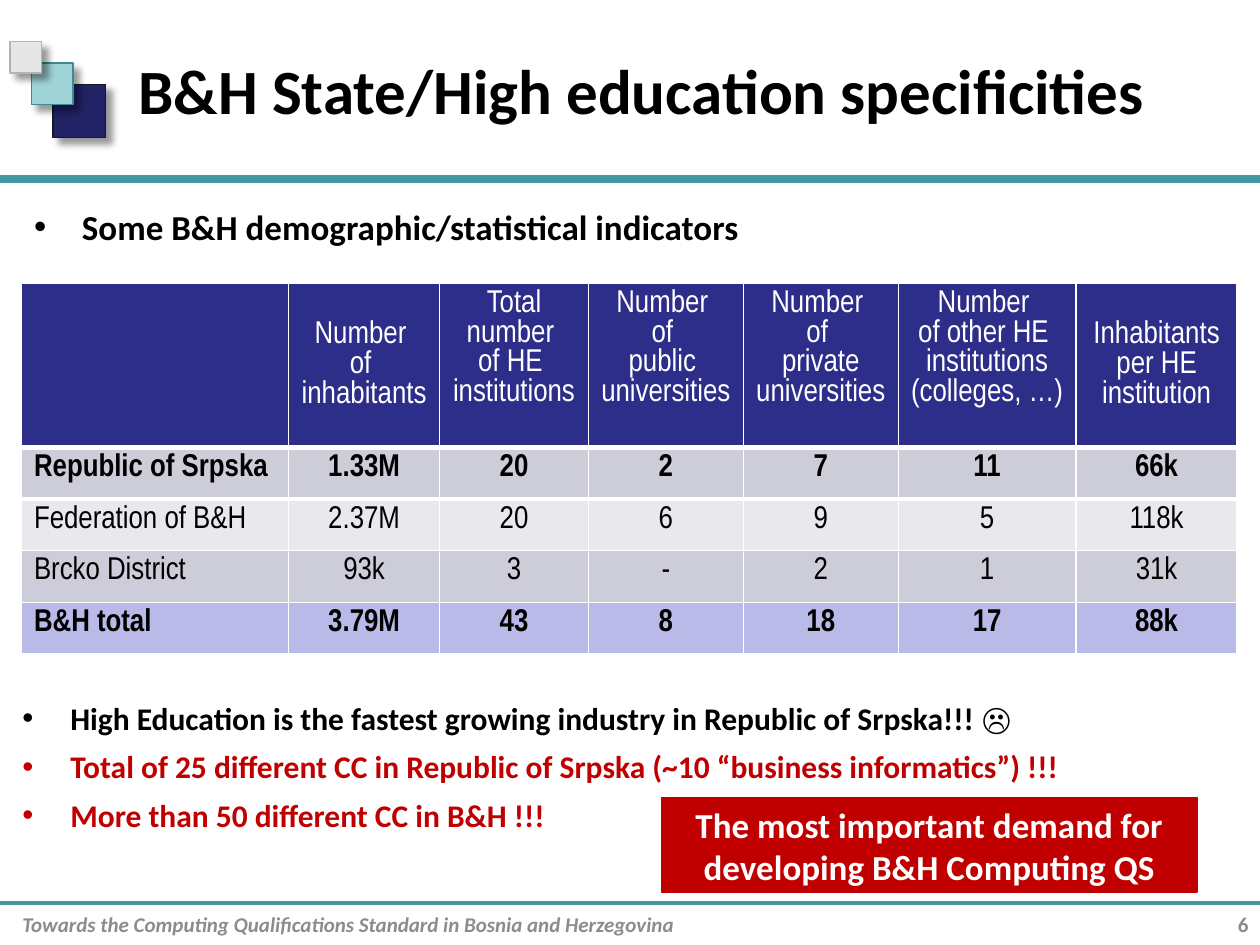
from dataclasses import dataclass

from lxml.etree import SubElement
from pptx import Presentation
from pptx.dml.color import RGBColor as Rgb
from pptx.enum.shapes import MSO_CONNECTOR as Conn, MSO_SHAPE as Shape
from pptx.enum.text import MSO_ANCHOR as Anchor, PP_ALIGN as Align
from pptx.oxml import parse_xml
from pptx.oxml.ns import nsdecls, qn
from pptx.util import Inches, Pt


@dataclass(frozen=True)
class Theme:
    black: str = "000000"
    white: str = "FFFFFF"
    gray: str = "8C8C8C"
    red: str = "C00000"
    teal: str = "4597A0"
    head: str = "2D2D8A"
    bands: tuple = ("CDCDDA", "E8E8ED")
    total: str = "BABAE8"
    sans: str = "Calibri"
    narrow: str = "Arial Narrow"
    big: int = 36
    mid: int = 20
    small: int = 18
    foot: int = 12


def box(left, top, width, height):
    return Inches(left), Inches(top), Inches(width), Inches(height)


class Deck:
    def __init__(self, theme):
        self.theme = theme
        self.file = Presentation()
        self.file.slide_width, self.file.slide_height = Inches(10), Inches(7.5)
        self.slide = self.file.slides.add_slide(self.file.slide_layouts[1])
        self.shapes = self.slide.shapes

    def style(self, para, size, color, align=Align.LEFT, bold=True, face=None):
        para.alignment = align
        font = para.font
        font.name = face or self.theme.sans
        font.size, font.bold = Pt(size), bold
        font.color.rgb = Rgb.from_string(color)

    def place(self, shape, area):
        shape.left, shape.top, shape.width, shape.height = box(*area)

    def title(self, text, area):
        shape = self.shapes.title
        self.place(shape, area)
        frame = shape.text_frame
        frame.text = text
        frame.vertical_anchor = Anchor.MIDDLE
        self.style(frame.paragraphs[0], self.theme.big, self.theme.black)

    def lead(self, text, area):
        shape = self.slide.placeholders[1]
        self.place(shape, area)
        self.fill_list(shape.text_frame, [(text, self.theme.black)], self.theme.mid)

    def bullets(self, items, area):
        frame = self.shapes.add_textbox(*box(*area)).text_frame
        frame.word_wrap = True
        self.fill_list(frame, items, self.theme.small)

    def fill_list(self, frame, items, size):
        frame.text = "\n".join(text for text, _ in items)
        for para, (_, color) in zip(frame.paragraphs, items):
            para.space_before = Pt(6)
            self.style(para, size, color)
            props = para._p.get_or_add_pPr()
            props.set("marL", str(Inches(0.38)))
            props.set("indent", str(Inches(-0.38)))
            for mark in ('buFont {} typeface="Arial"', 'buChar {} char="•"'):
                node = parse_xml(f'<a:{mark.format(nsdecls("a"))}/>')
                props.find(qn("a:defRPr")).addprevious(node)

    def rule(self, y, weight):
        line = self.shapes.add_connector(
            Conn.STRAIGHT, Inches(0), Inches(y), Inches(10), Inches(y))
        line.line.color.rgb = Rgb.from_string(self.theme.teal)
        line.line.width = Pt(weight)
        SubElement(line._element.spPr, qn("a:effectLst"))

    def rect(self, area, fill, edge):
        shape = self.shapes.add_shape(Shape.RECTANGLE, *box(*area))
        shape.shadow.inherit = False
        shape.fill.solid()
        shape.fill.fore_color.rgb = Rgb.from_string(fill)
        shape.line.color.rgb = Rgb.from_string(edge)
        shape.line.width = Pt(0.75)
        return shape

    def tile(self, left, top, side, fill, edge):
        """Draw a square with a soft shadow to the lower right."""
        shape = self.rect((left, top, side, side), fill, edge)
        effects = shape._element.spPr.find(qn("a:effectLst"))
        effects.append(parse_xml(
            f'<a:outerShdw {nsdecls("a")} blurRad="{Pt(4)}" dist="{Pt(5)}" '
            'dir="2700000" algn="tl" rotWithShape="0"><a:srgbClr val="000000">'
            '<a:alpha val="40000"/></a:srgbClr></a:outerShdw>'))

    def callout(self, text, area):
        frame = self.rect(area, self.theme.red, self.theme.red).text_frame
        frame.text = text
        frame.word_wrap = True
        frame.vertical_anchor = Anchor.TOP
        self.style(frame.paragraphs[0], self.theme.mid, self.theme.white, Align.CENTER)

    def footer(self, text, area, align=Align.LEFT, italic=False, inset=0.1):
        frame = self.shapes.add_textbox(*box(*area)).text_frame
        frame.text = text
        frame.word_wrap = True
        frame.margin_right = Inches(inset)
        frame.vertical_anchor = Anchor.MIDDLE
        para = frame.paragraphs[0]
        self.style(para, self.theme.foot, self.theme.gray, align)
        para.font.italic = italic

    def cell(self, cell, text, fill, color, align, bold):
        cell.fill.solid()
        cell.fill.fore_color.rgb = Rgb.from_string(fill)
        cell.text = text
        for para in cell.text_frame.paragraphs:
            self.style(para, self.theme.small, color, align, bold, self.theme.narrow)

    def edge(self, cell, side, weight):
        """Draw one border of a cell; side is T or B."""
        cell._tc.get_or_add_tcPr().insert(0, parse_xml(
            f'<a:ln{side} {nsdecls("a")} w="{Pt(weight)}"><a:solidFill>'
            f'<a:srgbClr val="{self.theme.white}"/></a:solidFill></a:ln{side}>'))

    def table(self, heads, rows, strong, left, top, widths, tall, low):
        """Draw a table; strong holds the indexes of the bold body rows."""
        look = self.theme
        area = box(left, top, sum(widths), tall + low * len(rows))
        grid = self.shapes.add_table(len(rows) + 1, len(heads), *area).table
        for col, width in zip(grid.columns, widths):
            col.width = Inches(width)
        for i, row in enumerate(grid.rows):
            row.height = Inches(low if i else tall)
        for j, text in enumerate(heads):
            self.cell(grid.cell(0, j), text, look.head, look.white, Align.CENTER, False)
            self.edge(grid.cell(0, j), "B", 3)
            self.edge(grid.cell(1, j), "T", 3)
        for j in (1, len(heads) - 1):
            grid.cell(0, j).vertical_anchor = Anchor.MIDDLE
        for i, row in enumerate(rows):
            fill = look.total if i == len(rows) - 1 else look.bands[i % 2]
            for j, text in enumerate(row):
                align = Align.CENTER if j else Align.LEFT
                self.cell(grid.cell(i + 1, j), text, fill, look.black, align, i in strong)


HEADS = [
    "",
    "Number \nof \ninhabitants",
    "Total number \nof HE \ninstitutions",
    "Number \nof \npublic \nuniversities",
    "Number \nof \nprivate\nuniversities",
    "Number \nof other HE \ninstitutions\n(colleges, …) ",
    "Inhabitants per HE institution",
]
ROWS = [
    ["Republic of Srpska", "1.33M", "20", "2", "7", "11", "66k"],
    ["Federation of B&H", "2.37M", "20", "6", "9", "5", "118k"],
    ["Brcko District", "93k", "3", "-", "2", "1", "31k"],
    ["B&H total", "3.79M", "43", "8", "18", "17", "88k"],
]


def main():
    look = Theme()
    deck = Deck(look)
    deck.rule(1.42, 4.5)
    deck.rule(7.17, 2.25)
    deck.tile(0.42, 0.67, 0.42, "222267", "0E1E20")
    deck.tile(0.25, 0.5, 0.33, "9ED3D7", "3C8C93")
    deck.tile(0.08, 0.33, 0.25, "E6E6E6", "B3B3B3")
    deck.title("B&H State/High education specificities", (1, 0.17, 8.83, 1.08))
    deck.lead("Some B&H demographic/statistical indicators", (0.17, 1.58, 9.67, 0.58))
    deck.footer("Towards the Computing Qualifications Standard in Bosnia and Herzegovina",
                (0.08, 7.17, 9.5, 0.33), italic=True)
    deck.footer("6", (9.58, 7.17, 0.33, 0.33), Align.RIGHT, inset=0)
    deck.bullets([
        ("High Education is the fastest growing industry in Republic of Srpska!!! ☹", look.black),
        ("Total of 25 different CC in Republic of Srpska (~10 “business informatics”) !!!", look.red),
        ("More than 50 different CC in B&H !!!", look.red),
    ], (0.08, 5.5, 9.92, 1.33))
    deck.table(HEADS, ROWS, (0, 3), 0.17, 2.25,
               (2.12, 1.2, 1.18, 1.23, 1.23, 1.41, 1.28), 1.28, 0.41)
    deck.callout("The most important demand for developing B&H Computing QS",
                 (5.25, 6.33, 4.25, 0.75))
    deck.file.save("out.pptx")


if __name__ == "__main__":
    main()
